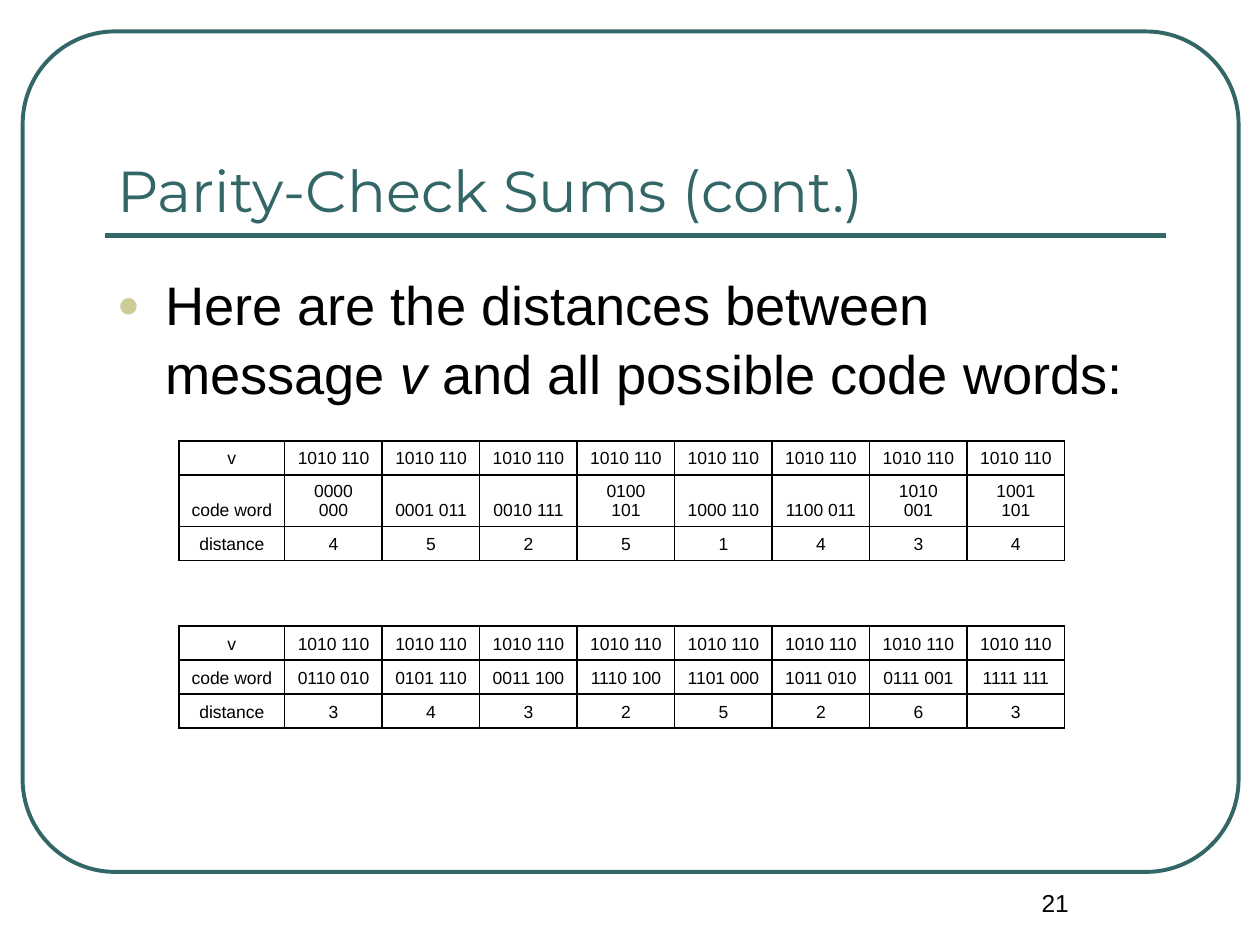
from dataclasses import dataclass

import pptx
import pptx.dml.color
import pptx.enum.shapes
import pptx.enum.text
import pptx.oxml
import pptx.oxml.ns
import pptx.util

Inches = pptx.util.Inches
Pt = pptx.util.Pt
qn = pptx.oxml.ns.qn
ALIGN = pptx.enum.text.PP_ALIGN
ANCHOR = pptx.enum.text.MSO_ANCHOR


@dataclass(frozen=True)
class Theme:
    accent: str = "336666"
    bullet: str = "CCCC99"
    ink: str = "000000"
    title_font: str = "Montserrat"
    body_font: str = "Arial"
    title_size: int = 33
    body_size: int = 31
    number_size: int = 14
    table_size: int = 10


THEME = Theme()
MESSAGE = "1010 110"
CODE_WORDS = [
    [("0000 000", 4), ("0001 011", 5), ("0010 111", 2), ("0100 101", 5),
     ("1000 110", 1), ("1100 011", 4), ("1010 001", 3), ("1001 101", 4)],
    [("0110 010", 3), ("0101 110", 4), ("0011 100", 3), ("1110 100", 2),
     ("1101 000", 5), ("1011 010", 2), ("0111 001", 6), ("1111 111", 3)],
]


def rgb(color):
    return pptx.dml.color.RGBColor.from_string(color)


def add_text(p, text, size, font=THEME.body_font, color=THEME.ink, italic=None, align=None):
    r = p.add_run()
    r.text = text
    r.font.size = Pt(size)
    r.font.name = font
    r.font.color.rgb = rgb(color)
    r.font.italic = italic
    if align is not None:
        p.alignment = align


def place(sp, left, top, width, height):
    sp.left, sp.top = Inches(left), Inches(top)
    sp.width, sp.height = Inches(width), Inches(height)


def add_xml(parent, tag, **attrs):
    el = parent.makeelement(qn(tag), attrs)
    parent.append(el)
    return el


def add_frame(s):
    sp = s.shapes.add_shape(pptx.enum.shapes.MSO_SHAPE.ROUNDED_RECTANGLE,
                            Inches(0.18), Inches(0.25), Inches(9.65), Inches(6.67))
    sp.adjustments[0] = 0.11
    sp.shadow.inherit = False
    sp.fill.background()
    sp.line.color.rgb = rgb(THEME.accent)
    sp.line.width = Pt(2.25)


def add_rule(s):
    line = s.shapes.add_connector(pptx.enum.shapes.MSO_CONNECTOR.STRAIGHT,
                                  Inches(0.83), Inches(1.87), Inches(9.25), Inches(1.87))
    line.line.color.rgb = rgb(THEME.accent)
    line.line.width = Pt(3)
    add_xml(line._element.spPr, "a:effectLst")


def fill_title(sp):
    place(sp, 0.83, 0.58, 8.42, 1.25)
    tf = sp.text_frame
    tf.vertical_anchor = ANCHOR.BOTTOM
    tf.auto_size = pptx.enum.text.MSO_AUTO_SIZE.NONE
    add_text(tf.paragraphs[0], "Parity-Check Sums (cont.)", THEME.title_size,
             font=THEME.title_font, color=THEME.accent, align=ALIGN.LEFT)


def fill_body(sp):
    place(sp, 0.83, 2.08, 8.42, 4.42)
    tf = sp.text_frame
    tf.auto_size = pptx.enum.text.MSO_AUTO_SIZE.NONE
    p = tf.paragraphs[0]
    p.space_before = Pt(0.2 * THEME.body_size)
    p.line_spacing = 1.05
    pPr = p._p.get_or_add_pPr()
    pPr.set("marL", str(Inches(0.38)))
    pPr.set("indent", str(Inches(-0.38)))
    add_xml(add_xml(pPr, "a:buClr"), "a:srgbClr", val=THEME.bullet)
    add_xml(pPr, "a:buSzPct", val="70000")
    add_xml(pPr, "a:buChar", char="●")
    add_text(p, "Here are the distances between message ", THEME.body_size)
    add_text(p, "v", THEME.body_size, italic=True)
    add_text(p, " and all possible code words:", THEME.body_size)


def set_borders(cell, sides):
    tcPr = cell._tc.get_or_add_tcPr()
    for side in ("L", "R", "T", "B"):
        ln = add_xml(tcPr, f"a:ln{side}", w=str(Pt(1)))
        if side in sides:
            add_xml(add_xml(ln, "a:solidFill"), "a:srgbClr", val=THEME.ink)
        else:
            add_xml(ln, "a:noFill")
    add_xml(tcPr, "a:noFill")


def block_rows(pairs):
    return [
        ["v"] + [MESSAGE] * len(pairs),
        ["code word"] + [word for word, _ in pairs],
        ["distance"] + [str(distance) for _, distance in pairs],
    ]


def add_distance_table(s):
    first, second = map(block_rows, CODE_WORDS)
    cols = len(first[0])
    rows = first + [[""] * cols] + second
    heights = [0.27, 0.41, 0.27, 0.52, 0.27, 0.27, 0.27]
    width, label_width = 7.03, 0.84
    table = s.shapes.add_table(len(rows), cols, Inches(1.42), Inches(3.5),
                               Inches(width), Inches(sum(heights))).table
    table.first_row = table.horz_banding = False
    for i, col in enumerate(table.columns):
        col.width = Inches((width - label_width) / (cols - 1) if i else label_width)
    for row, height, texts in zip(table.rows, heights, rows):
        row.height = Inches(height)
        for cell, text in zip(row.cells, texts):
            cell.vertical_anchor = ANCHOR.BOTTOM
            set_borders(cell, "LRTB" if text else "TB")
            if text:
                add_text(cell.text_frame.paragraphs[0], text, THEME.table_size,
                         align=ALIGN.CENTER)


def add_slide_number(s):
    tf = s.shapes.add_textbox(Inches(7.5), Inches(7), Inches(1.75), Inches(0.5)).text_frame
    tf.word_wrap = True
    add_text(tf.paragraphs[0], "21", THEME.number_size, align=ALIGN.CENTER)


def main():
    prs = pptx.Presentation()
    prs.slide_width, prs.slide_height = Inches(10), Inches(7.5)
    s = prs.slides.add_slide(prs.slide_layouts[1])
    add_frame(s)
    add_rule(s)
    fill_title(s.shapes.title)
    fill_body(s.placeholders[1])
    add_distance_table(s)
    add_slide_number(s)
    prs.save("out.pptx")


if __name__ == "__main__":
    main()
